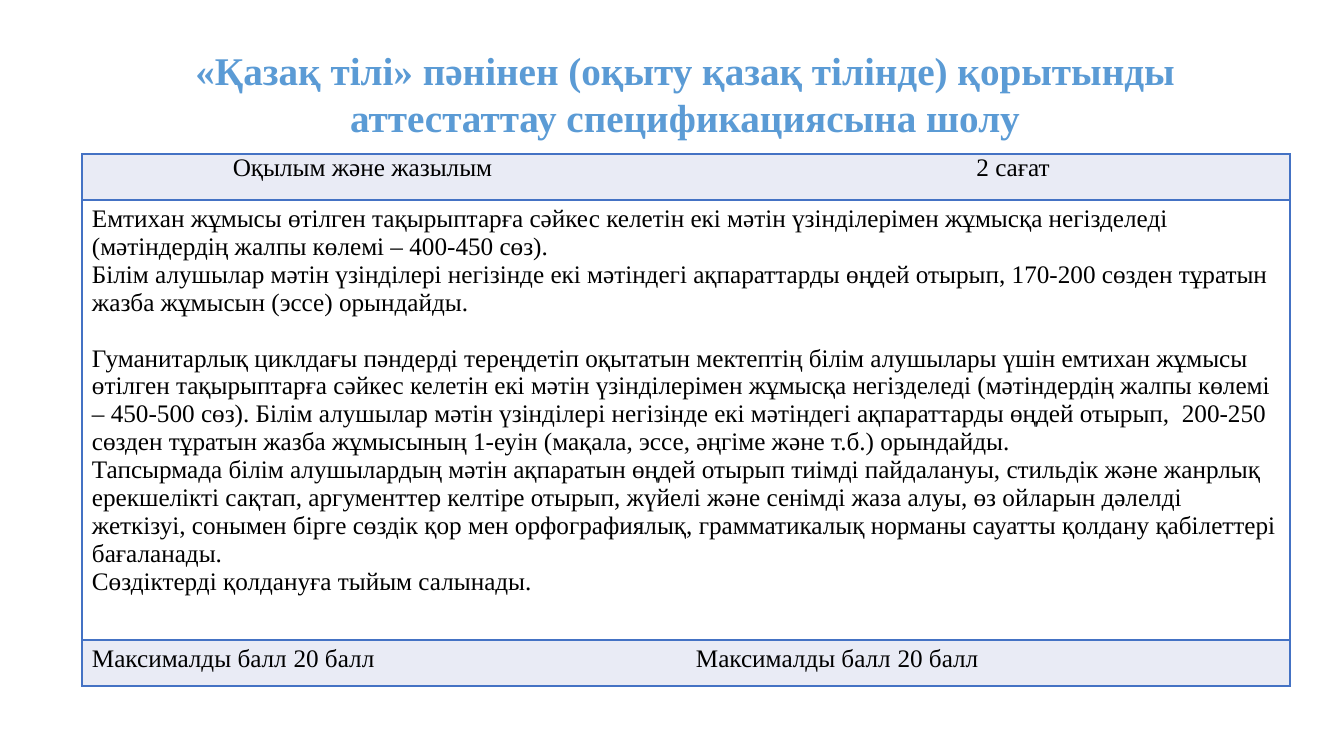
import pptx
import pptx.util
import pptx.dml.color
import pptx.enum.text
import pptx.oxml
import pptx.oxml.ns

PX = 914400 / 100.8
FONT = "Times New Roman"
BLUE = "4472C4"
BAND = "E9EBF5"
CENTER = pptx.enum.text.PP_ALIGN.CENTER
LEFT = pptx.enum.text.PP_ALIGN.LEFT

TITLE = "«Қазақ тілі» пәнінен (оқыту қазақ тілінде) қорытынды аттестаттау спецификациясына шолу"
HEADINGS = ["Оқылым және жазылым \t", "\t2 сағат"]
SCORE = "Максималды балл\t20 балл"
DETAILS = [
    "Емтихан жұмысы өтілген тақырыптарға сәйкес келетін екі мәтін үзінділерімен жұмысқа "
    "негізделеді (мәтіндердің жалпы көлемі – 400-450 сөз).",
    "Білім алушылар мәтін үзінділері негізінде екі мәтіндегі ақпараттарды өңдей отырып, "
    "170-200 сөзден тұратын жазба жұмысын (эссе) орындайды.",
    "Гуманитарлық циклдағы пәндерді тереңдетіп оқытатын мектептің білім алушылары үшін "
    "емтихан жұмысы өтілген тақырыптарға сәйкес келетін екі мәтін үзінділерімен жұмысқа "
    "негізделеді (мәтіндердің жалпы көлемі – 450-500 сөз). Білім алушылар мәтін үзінділері "
    "негізінде екі мәтіндегі ақпараттарды өңдей отырып,  200-250 сөзден тұратын жазба "
    "жұмысының 1-еуін (мақала, эссе, әңгіме және т.б.) орындайды.",
    "Тапсырмада білім алушылардың мәтін ақпаратын өңдей отырып тиімді пайдалануы, стильдік "
    "және жанрлық ерекшелікті сақтап, аргументтер келтіре отырып, жүйелі және сенімді жаза "
    "алуы, өз ойларын дәлелді жеткізуі, сонымен бірге сөздік қор мен орфографиялық, "
    "грамматикалық норманы сауатты қолдану қабілеттері бағаланады.",
    "Сөздіктерді қолдануға тыйым салынады.",
]
SECOND_PART = 2


def px(length):
    return pptx.util.Emu(round(length * PX))


def color(code):
    return pptx.dml.color.RGBColor.from_string(code)


def write(frame, lines, size=18, ink="000000", bold=False, align=LEFT):
    for index, line in enumerate(lines):
        para = frame.paragraphs[0] if index == 0 else frame.add_paragraph()
        para.alignment = align
        span = para.add_run()
        span.text = line
        span.font.name = FONT
        span.font.size = pptx.util.Pt(size)
        span.font.bold = bold
        span.font.color.rgb = color(ink)


def format_cell(cell, fill, edges, top=5, bottom=5):
    cell.margin_left = cell.margin_right = px(10 if top else 7)
    cell.margin_top, cell.margin_bottom = px(top), px(bottom)
    cell.fill.solid()
    cell.fill.fore_color.rgb = color(fill)
    properties = cell._tc.get_or_add_tcPr()
    for index, side in enumerate("LRTB"):
        paint = "<a:noFill/>"
        if side in edges:
            paint = f'<a:solidFill><a:srgbClr val="{BLUE}"/></a:solidFill>'
        border = pptx.oxml.parse_xml(
            f'<a:ln{side} {pptx.oxml.ns.nsdecls("a")} w="12700">{paint}</a:ln{side}>')
        properties.insert(index, border)


def add_title(page, left, top, width, height):
    title = page.shapes.title
    title.left, title.top, title.width, title.height = map(px, (left, top, width, height))
    title.text_frame.word_wrap = True
    title.text_frame.vertical_anchor = pptx.enum.text.MSO_ANCHOR.TOP
    write(title.text_frame, [TITLE], size=28, ink="5B9BD5", bold=True, align=CENTER)


def add_overview(page, left, top, width, height):
    band_height = 46
    table = page.shapes.add_table(3, 2, *map(px, (left, top, width, height))).table
    for column in table.columns:
        column.width = px(width // 2)
    for row, row_height in zip(table.rows, (band_height, height - 2 * band_height, band_height)):
        row.height = px(row_height)

    for column, (heading, edges) in enumerate(zip(HEADINGS, ("LTB", "RTB"))):
        cell = table.cell(0, column)
        write(cell.text_frame, [heading], align=CENTER)
        format_cell(cell, BAND, edges, top=0, bottom=0)
        cell = table.cell(2, column)
        write(cell.text_frame, [SCORE])
        format_cell(cell, BAND, edges)
        format_cell(table.cell(1, column), "FFFFFF", "LRTB")

    details = table.cell(1, 0)
    details.merge(table.cell(1, 1))
    write(details.text_frame, DETAILS)
    details.text_frame.paragraphs[SECOND_PART].space_before = pptx.util.Pt(20)


def main():
    deck = pptx.Presentation()
    deck.slide_width, deck.slide_height = px(1344), px(756)
    page = deck.slides.add_slide(deck.slide_layouts[5])
    add_overview(page, 82, 154, 1208, 532)
    add_title(page, 120, 41, 1130, 105)
    deck.save("out.pptx")


if __name__ == "__main__":
    main()
